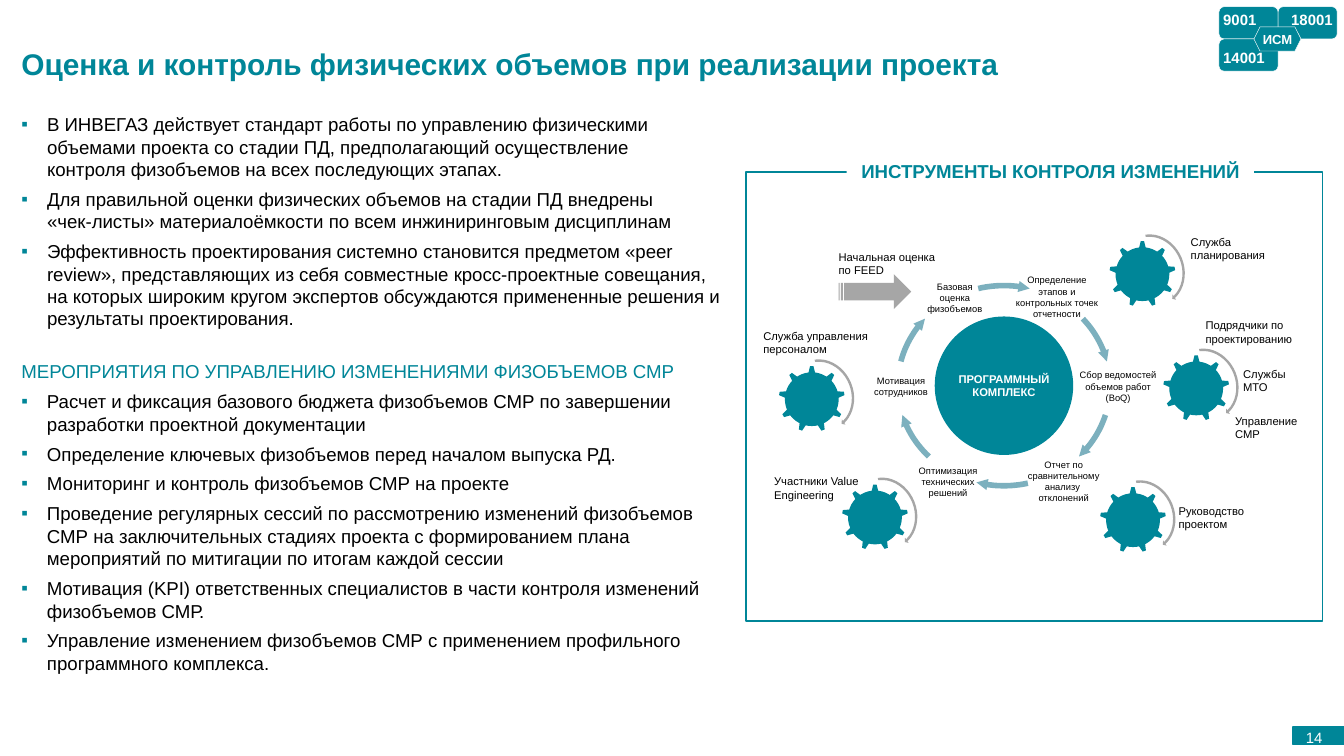
from math import cos, radians, sin

from lxml.etree import SubElement
from pptx import Presentation
from pptx.dml.color import RGBColor
from pptx.enum.shapes import MSO_SHAPE as Kind
from pptx.enum.text import MSO_ANCHOR as Anchor, PP_ALIGN as Align
from pptx.oxml.ns import qn
from pptx.util import Inches, Pt

TEAL, WHITE, BLACK, GRAY, BLUE = "008698", "FFFFFF", "000000", "A6A6A6", "7CB0BE"
SIDES = ("margin_left", "margin_top", "margin_right", "margin_bottom")

STANDARD = [
    "В ИНВЕГАЗ действует стандарт работы по управлению физическими объемами проекта "
    "со стадии ПД, предполагающий осуществление\nконтроля физобъемов на всех последующих этапах.",
    "Для правильной оценки физических объемов на стадии ПД внедрены\n"
    "«чек-листы» материалоёмкости по всем инжиниринговым дисциплинам",
    "Эффективность проектирования системно становится предметом «peer review», "
    "представляющих из себя совместные кросс-проектные совещания, на которых широким "
    "кругом экспертов обсуждаются примененные решения и результаты проектирования.",
]
MEASURES_HEADING = "МЕРОПРИЯТИЯ ПО УПРАВЛЕНИЮ ИЗМЕНЕНИЯМИ ФИЗОБЪЕМОВ СМР"
MEASURES = [
    "Расчет и фиксация базового бюджета физобъемов СМР по завершении разработки "
    "проектной документации",
    "Определение ключевых физобъемов перед началом выпуска РД.",
    "Мониторинг и контроль физобъемов СМР на проекте",
    "Проведение регулярных сессий по рассмотрению изменений физобъемов СМР на "
    "заключительных стадиях проекта с формированием плана мероприятий по митигации "
    "по итогам каждой сессии",
    "Мотивация (KPI) ответственных специалистов в части контроля изменений физобъемов СМР.",
    "Управление изменением физобъемов СМР с применением профильного программного комплекса.",
]
STEPS = [
    ("Базовая\nоценка физобъемов", 1.26, 0.81, 0.59, 0.25),
    ("Определение этапов и контрольных точек отчетности", 1.99, 0.76, 0.65, 0.34),
    ("Сбор ведомостей объемов работ (BoQ)", 2.48, 1.47, 0.58, 0.25),
    ("Отчет по сравнительному анализу \nотклонений", 1.97, 2.13, 0.79, 0.34),
    ("Оптимизация технических решений", 1.19, 2.18, 0.63, 0.25),
    ("Мотивация\nсотрудников", 0.82, 1.51, 0.67, 0.17),
]
PARTIES = [
    ("Начальная оценка по FEED", 0.69, 0.58, 0.81),
    ("Служба управления персоналом", 0.13, 1.17, 0.81),
    ("Участники Value Engineering", 0.21, 2.25, 0.81),
    ("Служба планирования", 3.31, 0.47, 0.83),
    ("Подрядчики по проектированию", 3.42, 1.09, 0.83),
    ("Службы МТО", 3.7, 1.45, 0.43),
    ("Управление СМР", 3.64, 1.8, 0.49),
    ("Руководство проектом", 3.22, 2.47, 0.73),
]
GEARS = [(0.96, 2.57), (0.49, 1.69), (2.95, 0.76), (3.35, 1.61), (2.88, 2.59)]
ARC_STARTS = (-14, 48, 107, 167, 225, 284)


def paint(color_format, color):
    """Give a fill or line format a solid colour from a hex string."""
    color_format.solid()
    color_format.fore_color.rgb = RGBColor.from_string(color)


def set_all(target, values):
    """Set each attribute named in a dict of format values."""
    for name, value in values.items():
        setattr(target, name, value)


def write(para, text, size, color, bold=False, **layout):
    """Write one paragraph in the slide's typeface."""
    para.text = text
    set_all(para, layout)
    for span in para.runs:
        set_all(span.font, {"name": "Arial", "size": Pt(size), "bold": bold})
        span.font.color.rgb = RGBColor.from_string(color)


def set_frame(frame, anchor=Anchor.TOP, margins=(0, 0, 0, 0), wrap=True):
    """Set anchor, margins and wrapping of a text frame."""
    set_all(frame, {"word_wrap": wrap, "vertical_anchor": anchor})
    set_all(frame, dict(zip(SIDES, map(Inches, margins))))


def add_text(page, box, text, size, color, frame=None, **layout):
    """Add a text box with one paragraph."""
    text_frame = page.shapes.add_textbox(*map(Inches, box)).text_frame
    set_frame(text_frame, **(frame or {}))
    write(text_frame.paragraphs[0], text, size, color, **layout)


def add_shape(page, kind, box, fill=None, line=None, width=0.75, rotation=0):
    """Add a preset shape without a shadow."""
    shape = page.shapes.add_shape(kind, *map(Inches, box))
    shape.shadow.inherit = False
    shape.rotation = rotation
    if fill:
        paint(shape.fill, fill)
    else:
        shape.fill.background()
    if line:
        paint(shape.line.fill, line)
        shape.line.width = Pt(width)
    else:
        shape.line.fill.background()
    return shape


def add_bullet(para):
    """Give a paragraph a hanging teal square bullet."""
    props = para._p.get_or_add_pPr()
    props.set("marL", str(Inches(0.19)))
    props.set("indent", str(-Inches(0.19)))
    SubElement(SubElement(props, qn("a:buClr")), qn("a:srgbClr"), val=TEAL)
    SubElement(props, qn("a:buFont"), typeface="Arial")
    SubElement(props, qn("a:buChar"), char="▪")


def add_list(page, box, items, heading=None):
    """Add a bulleted list, with a heading line if one is given."""
    frame = page.shapes.add_textbox(*map(Inches, box)).text_frame
    set_frame(frame, margins=(0, 0, 0.08, 0))
    lines = ([heading] if heading else []) + items
    for index, text in enumerate(lines):
        para = frame.add_paragraph() if index else frame.paragraphs[0]
        is_heading = text == heading
        if not is_heading:
            add_bullet(para)
        write(para, text, 10, TEAL if is_heading else BLACK,
              space_before=Pt(4 if index else 0))


def add_gear(page, x, y):
    """Add a nine-toothed gear centred on a point, with a turning arrow."""
    add_shape(page, Kind.OVAL, (x - 0.195, y - 0.195, 0.39, 0.39), TEAL, TEAL)
    for angle in range(0, 360, 40):
        left = x + 0.22 * sin(radians(angle)) - 0.025
        top = y - 0.22 * cos(radians(angle)) - 0.025
        add_shape(page, Kind.TRAPEZOID, (left, top, 0.05, 0.05), TEAL, rotation=angle)
    arrow = add_shape(page, Kind.CIRCULAR_ARROW, (x - 0.21, y - 0.28, 0.57, 0.5),
                      GRAY, rotation=68.3)
    for index, value in enumerate((0.036, 2.653, 205.703, 114.096, 0.047)):
        arrow.adjustments[index] = value


def add_arc_arrow(page, x, y, start, sweep=28):
    """Add an arrow along the cycle, clockwise from an angle measured from the top."""
    angles = [radians(start + sweep * step / 12) for step in range(13)]
    points = [(Inches(x + 0.79 * sin(a)), Inches(y - 0.745 * cos(a))) for a in angles]
    builder = page.shapes.build_freeform(*points[0])
    builder.add_line_segments(points[1:], close=False)
    arc = builder.convert_to_shape()
    arc.shadow.inherit = False
    arc.fill.background()
    paint(arc.line.fill, BLUE)
    arc.line.width = Pt(3)
    SubElement(arc.line._get_or_add_ln(), qn("a:tailEnd"), type="triangle", w="sm", len="sm")


def add_cycle(page, box):
    """Add the framed cycle of change control tools."""
    left, top, width, height = box
    add_shape(page, Kind.RECTANGLE, box, line=TEAL, width=1)
    label = add_shape(page, Kind.RECTANGLE, (left + 0.75, top - 0.09, 3.03, 0.17), WHITE)
    set_frame(label.text_frame, margins=(0.08, 0, 0.08, 0), wrap=False)
    write(label.text_frame.paragraphs[0], "ИНСТРУМЕНТЫ КОНТРОЛЯ ИЗМЕНЕНИЙ", 10, TEAL,
          bold=True, alignment=Align.CENTER)
    x, y = left + 1.92, top + 1.59
    hub = add_shape(page, Kind.OVAL, (x - 0.51, y - 0.51, 1.02, 1.02), TEAL, TEAL)
    set_frame(hub.text_frame, Anchor.MIDDLE, wrap=False)
    write(hub.text_frame.paragraphs[0], "ПРОГРАММНЫЙ\nКОМПЛЕКС", 6, WHITE,
          bold=True, alignment=Align.CENTER)
    add_shape(page, Kind.STRIPED_RIGHT_ARROW, (left + 0.69, top + 0.76, 0.54, 0.26), GRAY)
    for dx, dy in GEARS:
        add_gear(page, left + dx, top + dy)
    for start in ARC_STARTS:
        add_arc_arrow(page, x, y, start)
    for text, dx, dy, w, h in STEPS:
        add_text(page, (left + dx, top + dy, w, h), text, 5, BLACK,
                 {"anchor": Anchor.MIDDLE}, alignment=Align.CENTER)
    for text, dx, dy, w in PARTIES:
        add_text(page, (left + dx, top + dy, w, 0.2), text, 6, BLACK)


def add_badge(page, left, top):
    """Add the cluster of standard numbers around a hexagon."""
    plate_kind, pad = Kind.ROUNDED_RECTANGLE, (0.02,) * 4
    plates = [
        (plate_kind, (0, 0, 0.44, 0.24), "9001", 8, Anchor.TOP, Align.LEFT, pad),
        (plate_kind, (0.44, 0, 0.44, 0.24), "18001", 8, Anchor.TOP, Align.RIGHT, pad),
        (plate_kind, (0, 0.24, 0.44, 0.24), "14001", 8, Anchor.BOTTOM, Align.LEFT, pad),
        (Kind.HEXAGON, (0.26, 0.15, 0.35, 0.18), "ИСМ", 7, Anchor.MIDDLE, Align.CENTER, (0,) * 4),
    ]
    for kind, (dx, dy, w, h), text, size, anchor, align, margins in plates:
        plate = add_shape(page, kind, (left + dx, top + dy, w, h), TEAL, WHITE, 0.25)
        set_frame(plate.text_frame, anchor, margins)
        write(plate.text_frame.paragraphs[0], text, size, WHITE, bold=True, alignment=align)


def add_title(page, box, text):
    """Place and format the title placeholder."""
    title = page.shapes.title
    set_all(title, dict(zip(("left", "top", "width", "height"), map(Inches, box))))
    set_frame(title.text_frame, Anchor.BOTTOM)
    write(title.text_frame.paragraphs[0], text, 16, TEAL, bold=True, alignment=Align.LEFT)


def add_page_number(page, left, top, number):
    """Add the page number on its corner block."""
    add_shape(page, Kind.RECTANGLE, (left, top, 0.38, 0.13), TEAL, TEAL)
    add_text(page, (left - 0.17, top, 0.39, 0.14), number, 8, WHITE,
             {"anchor": Anchor.MIDDLE, "wrap": False}, alignment=Align.RIGHT, line_spacing=1.1)


def main():
    """Build the slide and save it."""
    deck = Presentation()
    deck.slide_width = Inches(10)
    deck.slide_height = deck.slide_width * 9 // 16
    page = deck.slides.add_slide(deck.slide_layouts[5])
    add_page_number(page, 9.62, 5.41, "14")
    add_title(page, (0.16, 0, 9.69, 0.61),
              "Оценка и контроль физических объемов при реализации проекта")
    add_list(page, (0.16, 2.68, 5.24, 2.36), MEASURES, MEASURES_HEADING)
    add_list(page, (0.16, 0.84, 5.32, 1.68), STANDARD)
    add_cycle(page, (5.55, 1.28, 4.29, 3.34))
    add_badge(page, 9.07, 0.05)
    deck.save("out.pptx")


if __name__ == "__main__":
    main()
